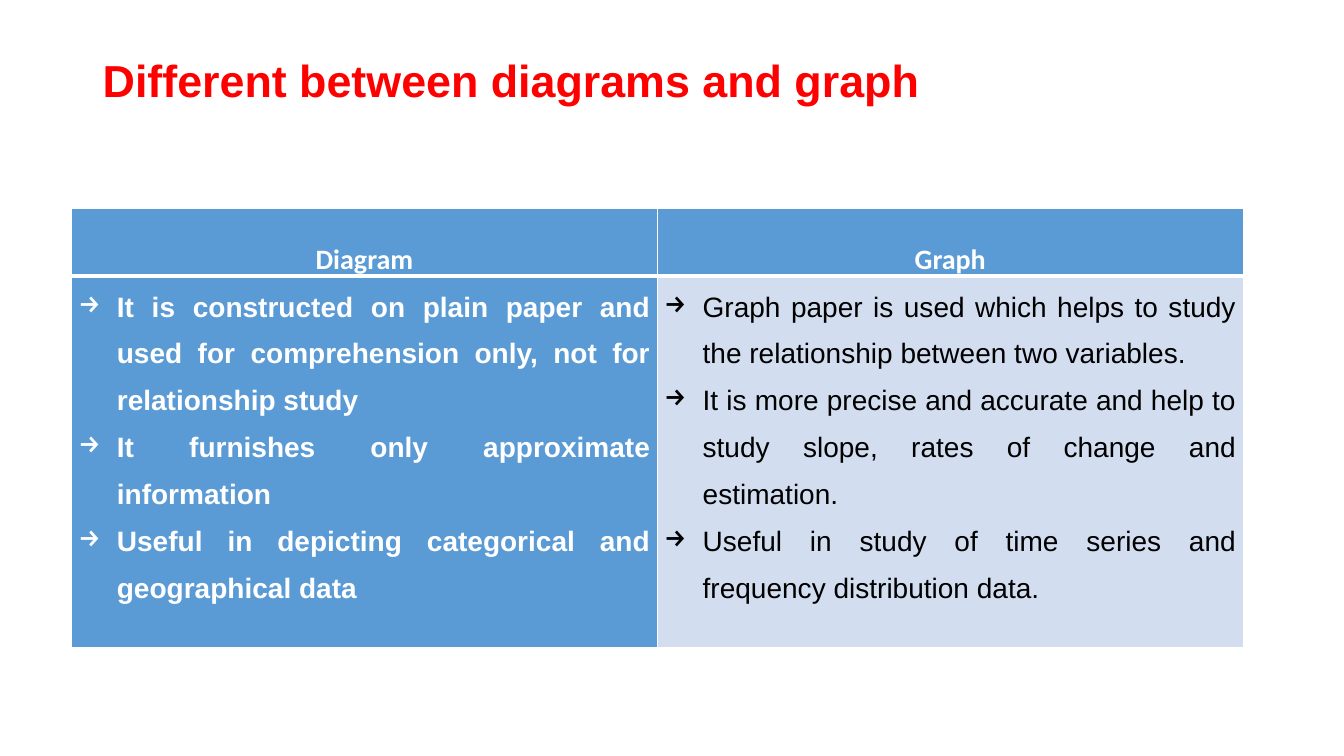
from lxml import etree
from pptx import Presentation
from pptx.dml.color import RGBColor
from pptx.enum.text import MSO_ANCHOR, PP_ALIGN
from pptx.oxml.ns import qn
from pptx.util import Inches, Pt

CENTER, JUSTIFY, LEFT = PP_ALIGN.CENTER, PP_ALIGN.JUSTIFY, PP_ALIGN.LEFT
TOP = MSO_ANCHOR.TOP
WHITE, BLACK, RED, BLUE, PALE = "FFFFFF", "000000", "FF0000", "5B9BD5", "D2DEEF"

TITLE = "Different between diagrams and graph"
COLUMNS = [
    ("Diagram", [
        "It is constructed on plain paper and used for comprehension only, "
        "not for relationship study",
        "It furnishes only approximate information",
        "Useful in depicting categorical and geographical data",
    ], dict(color=WHITE, bold=True), BLUE),
    ("Graph", [
        "Graph paper is used which helps to study the relationship between "
        "two variables.",
        "It is more precise and accurate and help to study slope, rates of "
        "change and estimation.",
        "Useful in study of time series and frequency distribution data.",
    ], dict(color=BLACK, bold=False), PALE),
]


def rgb(value):
    return RGBColor.from_string(value)


def write(tf, lines, size=20, font="Arial", color=BLACK, bold=False,
          align=LEFT, spacing=1.0, bullet=None):
    for i, line in enumerate(lines):
        p = tf.paragraphs[0] if i == 0 else tf.add_paragraph()
        p.alignment, p.line_spacing = align, spacing
        if bullet:
            pPr = p._p.get_or_add_pPr()
            indent = Inches(0.38)
            pPr.set("marL", str(indent))
            pPr.set("indent", str(-indent))
            etree.SubElement(pPr, qn("a:buChar")).set("char", bullet)
        r = p.add_run()
        r.text = line
        r.font.size, r.font.name, r.font.bold = Pt(size), font, bold
        r.font.color.rgb = rgb(color)


def set_borders(cell, color, **widths):
    tcPr = cell._tc.get_or_add_tcPr()
    for side in "LRTB":
        ln = etree.SubElement(tcPr, qn("a:ln" + side))
        ln.set("w", str(Pt(widths.get(side, 1))))
        fill = etree.SubElement(ln, qn("a:solidFill"))
        etree.SubElement(fill, qn("a:srgbClr")).set("val", color)


def style_cell(cell, fill, **widths):
    cell.margin_left = cell.margin_right = Inches(0.07)
    cell.margin_top = cell.margin_bottom = 0
    set_borders(cell, WHITE, **widths)
    cell.fill.solid()
    cell.fill.fore_color.rgb = rgb(fill)


def add_title(s, left, top, width, height):
    sp = s.shapes.add_textbox(Inches(left), Inches(top), Inches(width), Inches(height))
    tf = sp.text_frame
    tf.word_wrap, tf.vertical_anchor = True, TOP
    tf.margin_top = Inches(0.18)
    write(tf, [TITLE], size=32, color=RED, bold=True, spacing=0.9)


def add_comparison(s, left, top, width, height):
    header_height = 0.67
    table = s.shapes.add_table(2, len(COLUMNS), Inches(left), Inches(top),
                               Inches(width), Inches(height)).table
    table.first_row = table.horz_banding = False
    table.rows[0].height = Inches(header_height)
    table.rows[1].height = Inches(height - header_height)
    for i, (heading, points, text_format, fill) in enumerate(COLUMNS):
        # Heading
        head = table.cell(0, i)
        style_cell(head, BLUE, B=3)
        write(head.text_frame, [heading], font="Calibri", color=WHITE,
              bold=True, align=CENTER, spacing=2.0)
        # Points
        body = table.cell(1, i)
        style_cell(body, fill, T=3)
        write(body.text_frame, points, align=JUSTIFY, spacing=1.5,
              bullet="→", **text_format)


def main():
    prs = Presentation()
    prs.slide_width, prs.slide_height = Inches(13.33), Inches(7.5)
    s = prs.slides.add_slide(prs.slide_layouts[6])
    add_title(s, 0.92, 0.4, 11.5, 1.45)
    add_comparison(s, 0.71, 2.07, 11.62, 4.35)
    prs.save("out.pptx")


if __name__ == "__main__":
    main()
